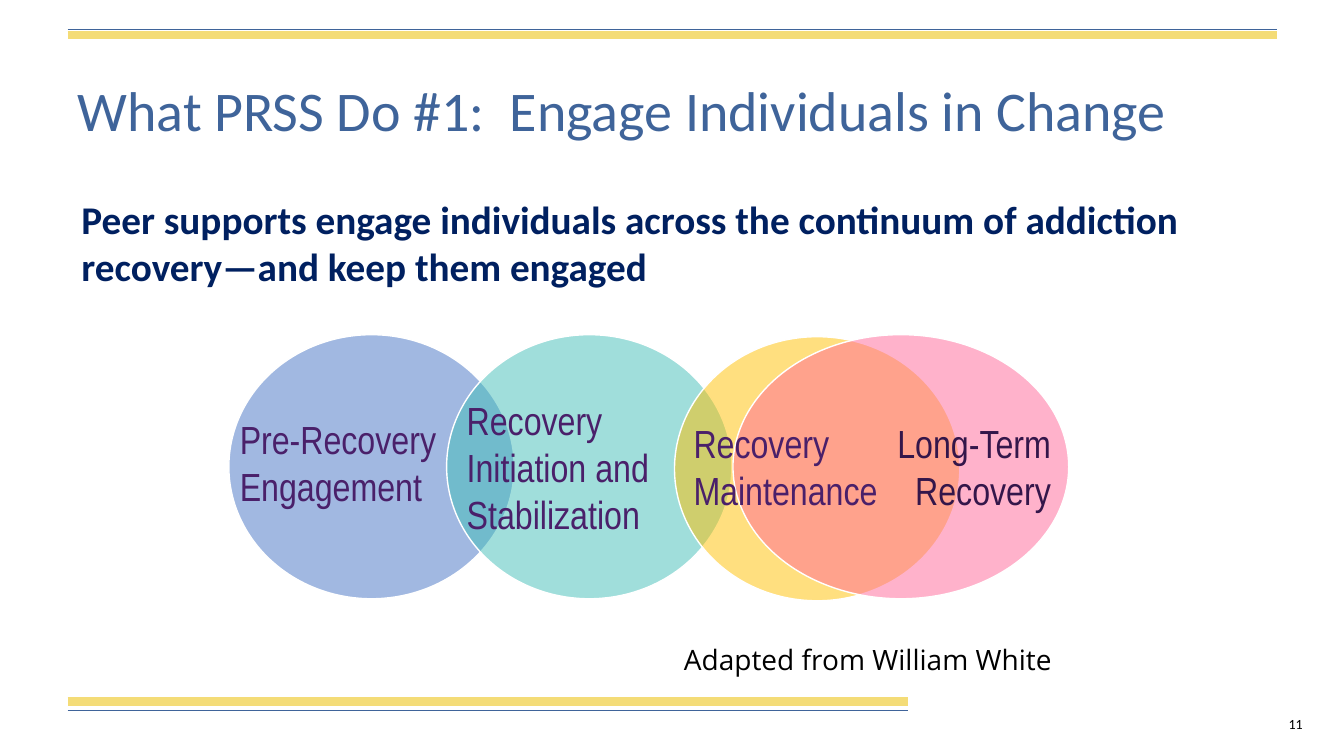
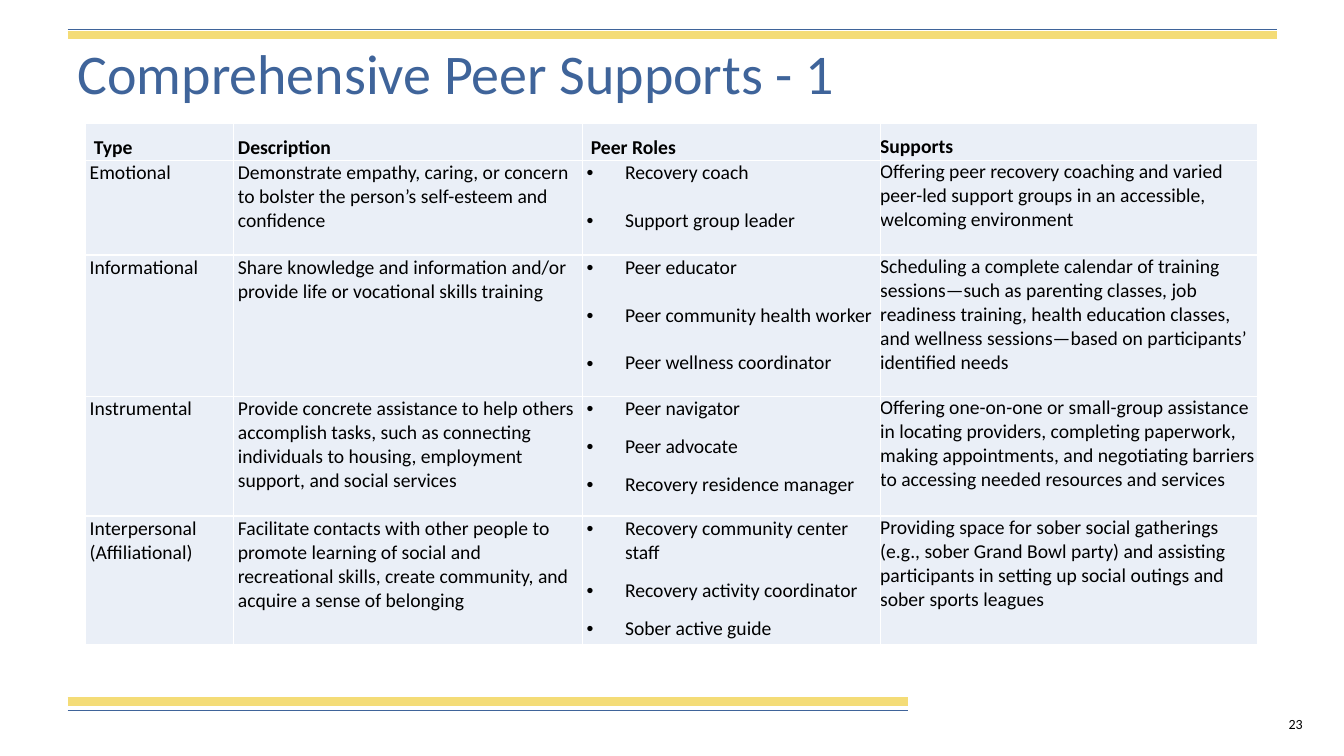
from dataclasses import dataclass

import pptx
import pptx.dml.color
import pptx.enum.shapes
import pptx.enum.text
import pptx.oxml
import pptx.oxml.ns
import pptx.oxml.xmlchemy
import pptx.presentation
import pptx.slide
import pptx.table
import pptx.text.text
import pptx.util
from lxml import etree
from pptx.util import Inches

LEFT = pptx.enum.text.PP_ALIGN.LEFT
RIGHT = pptx.enum.text.PP_ALIGN.RIGHT


@dataclass(frozen=True)
class Theme:
    blue: str = "3F649A"
    gold: str = "F4DC77"
    navy: str = "002060"
    purple: str = "4A206A"
    dark_purple: str = "34164A"
    black: str = "000000"
    white: str = "FFFFFF"
    cell: str = "EAEFF7"
    body_font: str = "Calibri"
    label_font: str = "Arial Narrow"
    credit_font: str = "Open Sans"
    title_size: int = 40
    label_size: int = 28
    credit_size: int = 20
    table_size: int = 14
    number_size: int = 10


THEME = Theme()


@dataclass(frozen=True)
class Style:
    size: int
    color: str
    font: str = THEME.body_font
    bold: bool = False


@dataclass(frozen=True)
class Band:
    y: float
    right: float
    color: str
    width: int


@dataclass(frozen=True)
class Box:
    left: float
    top: float
    width: float
    height: float

    def lengths(self) -> tuple[pptx.util.Length, ...]:
        return tuple(Inches(value) for value in (self.left, self.top, self.width, self.height))


@dataclass(frozen=True)
class Stage:
    oval: Box
    fill: str
    text: str
    label: Box
    color: str = THEME.purple
    align: pptx.enum.text.PP_ALIGN = LEFT


@dataclass(frozen=True)
class Support:
    kind: str
    description: str
    roles: tuple[str, ...]
    supports: str
    height: float
    role_gap: int


BAND_LEFT = 0.67
BANDS = (
    Band(0.35, 12.67, THEME.gold, 6),
    Band(6.96, 9.01, THEME.gold, 6),
    Band(0.29, 12.67, THEME.blue, 1),
    Band(7.05, 9.01, THEME.blue, 1),
)

STAGES = (
    Stage(Box(2.27, 3.32, 2.83, 2.62), "4472C4", "Pre-Recovery Engagement",
          Box(2.28, 4.07, 2.33, 1.04)),
    Stage(Box(4.43, 3.32, 2.83, 2.62), "43BEB9", "Recovery Initiation and Stabilization",
          Box(4.53, 3.88, 2.08, 1.51)),
    Stage(Box(6.69, 3.34, 2.83, 2.62), "FFC000", "Recovery Maintenance",
          Box(6.78, 4.11, 2.25, 1.04)),
    Stage(Box(7.27, 3.32, 3.33, 2.62), "FF6699", "Long-Term Recovery",
          Box(8.69, 4.11, 1.83, 1.04), THEME.dark_purple, RIGHT),
)

HEADERS = ("Type", "Description", "Peer Roles", "Supports")
INDENTED_HEADERS = ("Type", "Peer Roles")
COLUMN_WIDTHS = (1.47, 3.46, 2.95, 3.74)
HEADER_HEIGHT = 0.37
PARAGRAPH_GAP = 10
BLANK_LINE_GAP = 17
SUPPORTS = (
    Support("Emotional",
            "Demonstrate empathy, caring, or concern to bolster the person’s self-esteem "
            "and confidence",
            ("Recovery coach", "Support group leader"),
            "Offering peer recovery coaching and varied peer-led support groups in an "
            "accessible, welcoming environment",
            0.94, BLANK_LINE_GAP),
    Support("Informational",
            "Share knowledge and information and/or provide life or vocational skills training",
            ("Peer educator", "Peer community health worker", "Peer wellness coordinator"),
            "Scheduling a complete calendar of training sessions—such as parenting classes, "
            "job readiness training, health education classes, and wellness sessions—based "
            "on participants’ identified needs",
            1.4, BLANK_LINE_GAP),
    Support("Instrumental",
            "Provide concrete assistance to help others accomplish tasks, such as connecting "
            "individuals to housing, employment support, and social services",
            ("Peer navigator", "Peer advocate", "Recovery residence manager"),
            "Offering one-on-one or small-group assistance in locating providers, completing "
            "paperwork, making appointments, and negotiating barriers to accessing needed "
            "resources and services",
            1.19, PARAGRAPH_GAP),
    Support("Interpersonal (Affiliational)",
            "Facilitate contacts with other people to promote learning of social and "
            "recreational skills, create community, and acquire a sense of belonging",
            ("Recovery community center staff", "Recovery activity coordinator",
             "Sober active guide"),
            "Providing space for sober social gatherings (e.g., sober Grand Bowl party) and "
            "assisting participants in setting up social outings and sober sports leagues",
            1.28, PARAGRAPH_GAP),
)


def rgb(color: str) -> pptx.dml.color.RGBColor:
    return pptx.dml.color.RGBColor.from_string(color)


def add_element(parent: etree._Element, tag: str, **attributes: str) -> etree._Element:
    return etree.SubElement(parent, pptx.oxml.ns.qn(tag), attributes)


def style_runs(paragraph: pptx.text.text._Paragraph, style: Style) -> None:
    for run in paragraph.runs:
        run.font.name = style.font
        run.font.size = pptx.util.Pt(style.size)
        run.font.bold = style.bold
        run.font.color.rgb = rgb(style.color)


def add_text(slide: pptx.slide.Slide, box: Box, text: str, style: Style,
             align: pptx.enum.text.PP_ALIGN = LEFT) -> None:
    frame = slide.shapes.add_textbox(*box.lengths()).text_frame
    frame.word_wrap = True
    frame.auto_size = pptx.enum.text.MSO_AUTO_SIZE.SHAPE_TO_FIT_TEXT
    frame.text = text
    frame.paragraphs[0].alignment = align
    style_runs(frame.paragraphs[0], style)


def add_band(slide: pptx.slide.Slide, band: Band) -> None:
    connector = slide.shapes.add_connector(
        pptx.enum.shapes.MSO_CONNECTOR.STRAIGHT,
        Inches(BAND_LEFT), Inches(band.y), Inches(band.right), Inches(band.y))
    connector.line.color.rgb = rgb(band.color)
    connector.line.width = pptx.util.Pt(band.width)
    add_element(connector._element.spPr, "a:effectLst")


def add_slide(presentation: pptx.presentation.Presentation, title: str, title_top: float,
              number: int) -> pptx.slide.Slide:
    """Add a slide with the shared bands, number and title style."""
    slide = presentation.slides.add_slide(presentation.slide_layouts.get_by_name("Title Only"))
    for band in BANDS:
        add_band(slide, band)
    add_text(slide, Box(12.16, 7.05, 0.86, 0.27), str(number),
             Style(THEME.number_size, THEME.black), RIGHT)

    shape = slide.shapes.title
    shape.left, shape.top, shape.width, shape.height = Box(0.67, title_top, 12, 1.45).lengths()
    frame = shape.text_frame
    frame.text = title
    frame.word_wrap = True
    frame.auto_size = pptx.enum.text.MSO_AUTO_SIZE.NONE
    frame.vertical_anchor = pptx.enum.text.MSO_ANCHOR.MIDDLE
    paragraph = frame.paragraphs[0]
    paragraph.alignment = LEFT
    paragraph.line_spacing = 0.9
    style_runs(paragraph, Style(THEME.title_size, THEME.blue))
    return slide


def add_stages(slide: pptx.slide.Slide) -> None:
    """Draw the overlapping translucent ovals, then their labels on top."""
    group = slide.shapes.add_group_shape()
    for stage in STAGES:
        oval = group.shapes.add_shape(pptx.enum.shapes.MSO_SHAPE.OVAL, *stage.oval.lengths())
        oval.shadow.inherit = False
        oval.fill.solid()
        oval.fill.fore_color.rgb = rgb(stage.fill)
        color = oval._element.spPr.find(".//" + pptx.oxml.ns.qn("a:srgbClr"))
        add_element(color, "a:alpha", val="50000")
        oval.line.color.rgb = rgb(THEME.white)
        oval.line.width = pptx.util.Pt(1)
    for stage in STAGES:
        add_text(slide, stage.label, stage.text,
                 Style(THEME.label_size, stage.color, THEME.label_font), stage.align)


def add_bullet(paragraph: pptx.text.text._Paragraph) -> None:
    properties = paragraph._p.get_or_add_pPr()
    properties.set("marL", str(Inches(0.38)))
    properties.set("indent", str(-Inches(0.38)))
    add_element(properties, "a:buFont", typeface="Arial")
    add_element(properties, "a:buChar", char="•")


def format_cell(cell: pptx.table._Cell, left_margin: float, right_margin: float) -> None:
    """Set the margins, fill and thin white borders of a cell."""
    cell.margin_left, cell.margin_right = Inches(left_margin), Inches(right_margin)
    cell.margin_top = Inches(0.01 if right_margin else 0)
    cell.margin_bottom = 0
    cell.fill.solid()
    cell.fill.fore_color.rgb = rgb(THEME.cell)
    properties = cell._tc.get_or_add_tcPr()
    for index, side in enumerate(("a:lnL", "a:lnR", "a:lnT", "a:lnB")):
        border = add_element(properties, side, w=str(pptx.util.Pt(1)))
        add_element(add_element(border, "a:solidFill"), "a:srgbClr", val=THEME.white)
        properties.insert(index, border)


def add_support_table(slide: pptx.slide.Slide) -> None:
    heights = (HEADER_HEIGHT, *(support.height for support in SUPPORTS))
    box = Box(0.85, 1.22, sum(COLUMN_WIDTHS), sum(heights))
    table = slide.shapes.add_table(len(heights), len(HEADERS), *box.lengths()).table
    table.first_row = table.horz_banding = False
    for column, width in zip(table.columns, COLUMN_WIDTHS):
        column.width = Inches(width)
    for row, height in zip(table.rows, heights):
        row.height = Inches(height)

    def margin(column: int) -> float:
        return 0 if column == len(HEADERS) - 1 else 0.04

    for column, header in enumerate(HEADERS):
        cell = table.cell(0, column)
        indent = 0.04 if header in INDENTED_HEADERS else 0
        format_cell(cell, margin(column) + indent, margin(column))
        cell.text_frame.text = header
        paragraph = cell.text_frame.paragraphs[0]
        paragraph.line_spacing = 1.5
        style_runs(paragraph, Style(THEME.table_size, THEME.black, bold=True))

    for row, support in enumerate(SUPPORTS, start=1):
        contents = ((support.kind,), (support.description,), support.roles, (support.supports,))
        for column, lines in enumerate(contents):
            cell = table.cell(row, column)
            format_cell(cell, margin(column), margin(column))
            cell.text_frame.text = "\n".join(lines)
            has_bullets = lines is support.roles
            for paragraph in cell.text_frame.paragraphs:
                if has_bullets:
                    add_bullet(paragraph)
                gap = support.role_gap if has_bullets else PARAGRAPH_GAP
                paragraph.space_after = pptx.util.Pt(gap)
                style_runs(paragraph, Style(THEME.table_size, THEME.black))


def main() -> None:
    presentation = pptx.Presentation()
    presentation.slide_width = Inches(13.33)
    presentation.slide_height = Inches(7.5)

    engage = add_slide(presentation, "What PRSS Do #1:  Engage Individuals in Change", 0.4, 11)
    add_stages(engage)
    add_text(engage, Box(6.34, 6.33, 4.19, 0.44), "Adapted from William White",
             Style(THEME.credit_size, THEME.black, THEME.credit_font), RIGHT)
    add_text(engage, Box(0.71, 1.89, 11.29, 1.04),
             "Peer supports engage individuals across the continuum of addiction "
             "recovery—and keep them engaged",
             Style(THEME.label_size, THEME.navy, bold=True))

    supports = add_slide(presentation, "Comprehensive Peer Supports - 1", 0.03, 23)
    add_support_table(supports)
    presentation.save("out.pptx")


if __name__ == "__main__":
    main()
